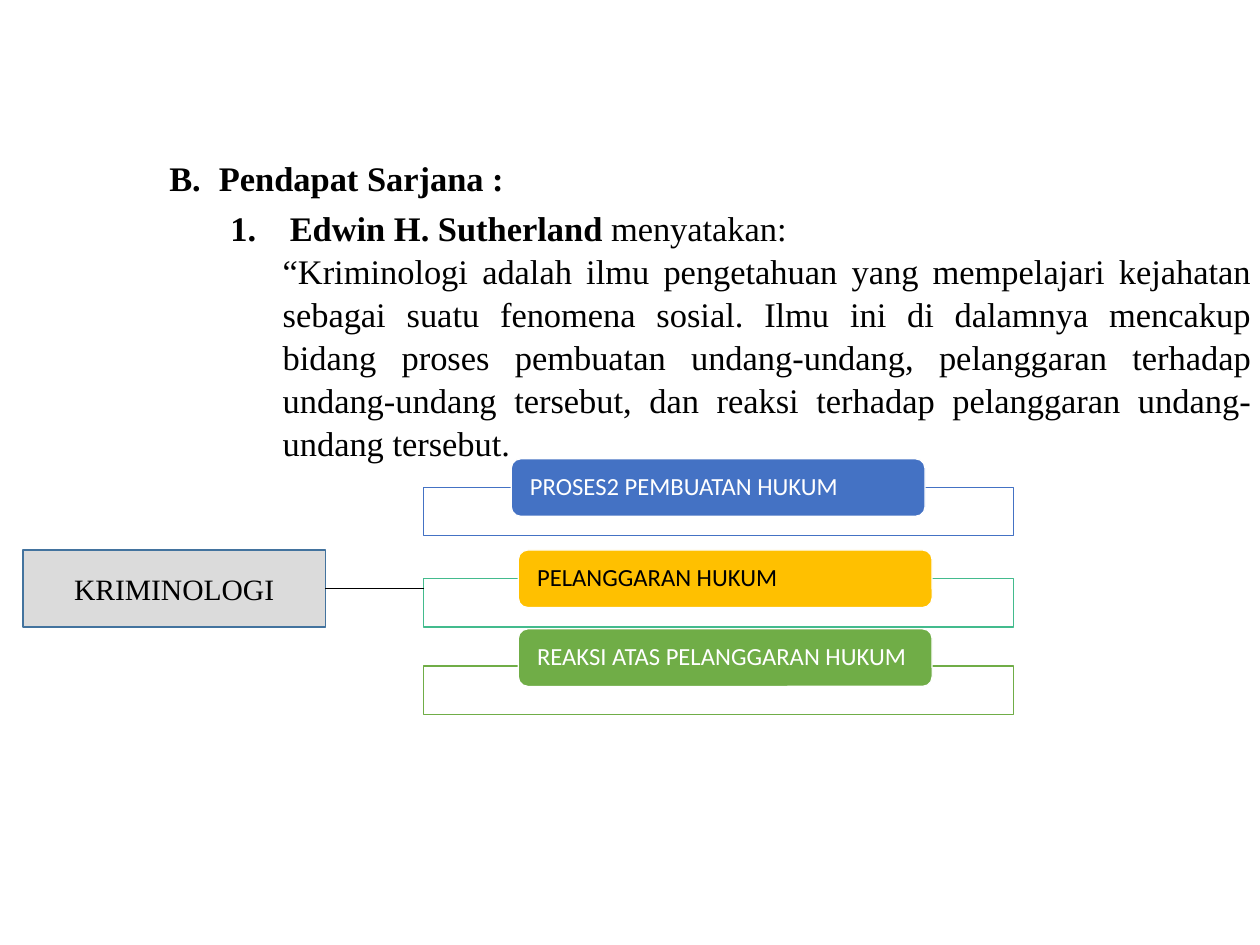
from lxml import etree
from pptx import Presentation
from pptx.dml.color import RGBColor
from pptx.enum import shapes, text
from pptx.oxml import ns
from pptx.util import Inches, Pt

BLACK = RGBColor(0x00, 0x00, 0x00)
WHITE = RGBColor(0xFF, 0xFF, 0xFF)
BLUE = RGBColor(0x44, 0x72, 0xC4)
TEAL = RGBColor(0x43, 0xBB, 0x8D)
GOLD = RGBColor(0xFF, 0xC0, 0x00)
GREEN = RGBColor(0x70, 0xAD, 0x47)
GREY = RGBColor(0xDB, 0xDB, 0xDB)
STEEL = RGBColor(0x43, 0x73, 0x9E)
SERIF = "Times New Roman"
SANS = "Calibri"

# Left margin, first-line indent, space after, numbering, (wording, bold) spans
OPINION = [
    (0.85, -0.56, 6, {"type": "alphaUcPeriod", "startAt": "2"},
     [("Pendapat Sarjana :", True)]),
    (1.65, -0.67, 0, {"type": "arabicPeriod"},
     [("Edwin H. Sutherland ", True), ("menyatakan:", False)]),
    (1.57, 0, 0, None,
     [("“Kriminologi adalah ilmu pengetahuan yang mempelajari kejahatan "
       "sebagai suatu fenomena sosial. Ilmu ini di dalamnya mencakup bidang "
       "proses pembuatan undang-undang, pelanggaran terhadap undang-undang "
       "tersebut, dan reaksi terhadap pelanggaran undang-undang tersebut.",
       False)]),
]

# Wording, frame top, bar left, bar top, frame line, bar fill, text colour
BRANCHES = [
    ("PROSES2 PEMBUATAN HUKUM", 5.5, 5.77, 5.18, BLUE, BLUE, WHITE),
    ("PELANGGARAN HUKUM", 6.53, 5.85, 6.21, TEAL, GOLD, BLACK),
    ("REAKSI ATAS PELANGGARAN HUKUM", 7.52, 5.85, 7.1, GREEN, GREEN, WHITE),
]
FRAME_LEFT = 4.78


def set_font(font, name, size, color, bold=False):
    font.name, font.size, font.bold = name, Pt(size), bold
    font.color.rgb = color


def set_numbering(para, margin, indent, numbering):
    properties = para._p.get_or_add_pPr()
    properties.set("marL", str(Inches(margin)))
    properties.set("indent", str(Inches(indent)))
    if numbering:
        etree.SubElement(properties, ns.qn("a:buFontTx"))
        etree.SubElement(properties, ns.qn("a:buAutoNum"), numbering)
    else:
        etree.SubElement(properties, ns.qn("a:buNone"))


def fill_opinion(body):
    body.left, body.top = Inches(1.52), Inches(1.7)
    body.width, body.height = Inches(12.7), Inches(3.48)
    frame = body.text_frame
    frame.word_wrap = True
    frame.auto_size = text.MSO_AUTO_SIZE.SHAPE_TO_FIT_TEXT
    for index, (margin, indent, after, numbering, spans) in enumerate(OPINION):
        para = frame.add_paragraph() if index else frame.paragraphs[0]
        set_numbering(para, margin, indent, numbering)
        para.alignment = text.PP_ALIGN.JUSTIFY
        para.line_spacing = 1.04
        para.space_before, para.space_after = Pt(0), Pt(after)
        for wording, bold in spans:
            span = para.add_run()
            span.text = wording
            set_font(span.font, SERIF, 28, BLACK, bold)


def add_box(page, kind, left, top, width, height, fill, line):
    box = page.shapes.add_shape(
        kind, Inches(left), Inches(top), Inches(width), Inches(height))
    box.shadow.inherit = False
    box.fill.solid()
    box.fill.fore_color.rgb = fill
    box.line.color.rgb = line
    box.line.width = Pt(1)
    return box


def set_label(box, wording, name, size, color, alignment):
    frame = box.text_frame
    frame.text = wording
    frame.word_wrap = True
    frame.vertical_anchor = text.MSO_ANCHOR.MIDDLE
    para = frame.paragraphs[0]
    para.alignment = alignment
    set_font(para.runs[0].font, name, size, color)


def add_branch(page, wording, frame_top, left, top, line, fill, color):
    """Add an outlined frame with a coloured label bar over its top edge."""
    frame = add_box(page, shapes.MSO_SHAPE.RECTANGLE,
                    FRAME_LEFT, frame_top, 6.66, 0.55, WHITE, line)
    white = frame.fill._xPr.find(".//" + ns.qn("a:srgbClr"))
    etree.SubElement(white, ns.qn("a:alpha"), val="90000")
    bar = add_box(page, shapes.MSO_SHAPE.ROUNDED_RECTANGLE,
                  left, top, 4.67, 0.65, fill, WHITE)
    set_label(bar, wording, SANS, 20, color, text.PP_ALIGN.LEFT)
    bar.text_frame.margin_left = bar.text_frame.margin_right = Inches(0.18)
    bar.text_frame.paragraphs[0].line_spacing = 0.9


def add_link(page, left, right, height):
    link = page.shapes.add_connector(
        shapes.MSO_CONNECTOR.STRAIGHT,
        Inches(left), Inches(height), Inches(right), Inches(height))
    link.line.color.rgb = BLACK
    link.line.width = Pt(0.75)
    etree.SubElement(link._element.spPr, ns.qn("a:effectLst"))


def main():
    deck = Presentation()
    deck.slide_width, deck.slide_height = Inches(14.22), Inches(10.67)
    page = deck.slides.add_slide(deck.slide_layouts[1])
    title = page.shapes.title._element
    title.getparent().remove(title)
    fill_opinion(page.placeholders[1])
    for branch in BRANCHES:
        add_branch(page, *branch)
    subject = add_box(page, shapes.MSO_SHAPE.RECTANGLE,
                      0.26, 6.21, 3.41, 0.87, GREY, STEEL)
    set_label(subject, "KRIMINOLOGI", SERIF, 24, BLACK, text.PP_ALIGN.CENTER)
    add_link(page, 3.67, FRAME_LEFT, 6.64)
    deck.save("out.pptx")


if __name__ == "__main__":
    main()
